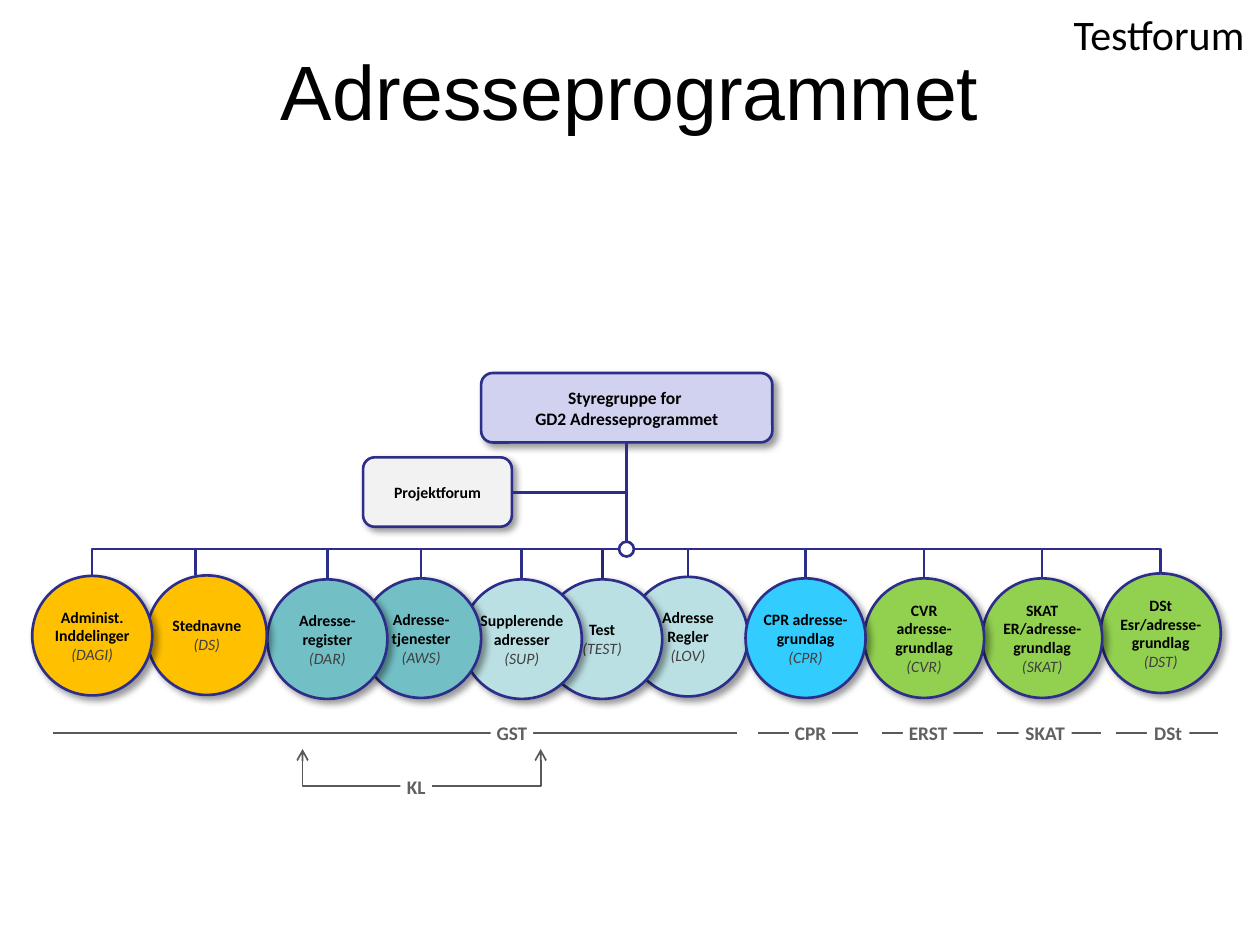
from lxml.etree import SubElement
from pptx import Presentation
from pptx.dml.color import RGBColor
from pptx.enum.shapes import MSO_CONNECTOR, MSO_SHAPE
from pptx.enum.text import MSO_ANCHOR, MSO_AUTO_SIZE, PP_ALIGN
from pptx.oxml.ns import qn
from pptx.util import Cm, Pt

NAVY, GREY, BLACK = "2D2D8A", "595959", "000000"
GOLD, TEAL, PALE, SKY, GREEN = "FFC000", "72BFC5", "BBE0E3", "33CCFF", "92D050"
color = RGBColor.from_string


def add_box(kind, place, fill, paragraphs, margins=(0, 0), outlined=True):
    box = slide.shapes.add_shape(kind, *map(Cm, place))
    if fill:
        box.fill.solid()
        box.fill.fore_color.rgb = color(fill)
    else:
        box.fill.background()
    if outlined:
        box.line.color.rgb = color(NAVY)
        box.line.width = Pt(1.5)
    else:
        box.line.fill.background()
    box.shadow.inherit = False
    if outlined and paragraphs:
        effects = box._element.spPr.find(qn("a:effectLst"))
        shadow = SubElement(effects, qn("a:outerShdw"), blurRad="50800", dist="38100",
                            dir="2700000", algn="tl", rotWithShape="0")
        tint = SubElement(shadow, qn("a:srgbClr"), val=BLACK)
        SubElement(tint, qn("a:alpha"), val="40000")
    frame = box.text_frame
    side, edge = margins
    settings = {"margin_left": Cm(side), "margin_right": Cm(side), "margin_top": Cm(edge),
                "margin_bottom": Cm(edge), "word_wrap": outlined,
                "vertical_anchor": MSO_ANCHOR.MIDDLE if outlined else MSO_ANCHOR.TOP}
    for name, value in settings.items():
        setattr(frame, name, value)
    for index, (words, size, ink, bold) in enumerate(paragraphs):
        paragraph = frame.add_paragraph() if index else frame.paragraphs[0]
        paragraph.text = words
        paragraph.alignment = PP_ALIGN.CENTER
        for run in paragraph.runs:
            font = {"name": "Calibri", "size": Pt(size), "bold": bold, "italic": not bold}
            for name, value in font.items():
                setattr(run.font, name, value)
            run.font.color.rgb = color(ink)
    return box


def add_line(kind, ends, ink=NAVY, width=1.5):
    line = slide.shapes.add_connector(kind, *map(Cm, ends))
    line.line.color.rgb = color(ink)
    line.line.width = Pt(width)
    properties = line._element.spPr
    SubElement(properties, qn("a:effectLst"))
    if kind == MSO_CONNECTOR.ELBOW:
        properties.find(qn("a:prstGeom")).set("prst", "bentConnector2")


deck = Presentation()
deck.slide_width, deck.slide_height = Cm(25.4), Cm(19.05)
slide = deck.slides.add_slide(deck.slide_layouts[5])

title = slide.shapes.title
title_place = {"left": Cm(1.27), "top": Cm(0.76), "width": Cm(22.86), "height": Cm(3.18)}
for name, value in title_place.items():
    setattr(title, name, value)
title.text_frame.text = "Adresseprogrammet"
title.text_frame.vertical_anchor = MSO_ANCHOR.TOP

forum = slide.shapes.add_textbox(Cm(21.36), Cm(0.05), Cm(4.01), Cm(1.27))
forum.text_frame.text = "Testforum"
forum.text_frame.word_wrap = False

for heading, face, size in ((title, "Arial", 44), (forum, "Calibri", 24)):
    paragraph = heading.text_frame.paragraphs[0]
    paragraph.alignment = PP_ALIGN.CENTER
    font = paragraph.runs[0].font
    font.name, font.size = face, Pt(size)
    font.color.rgb = color(BLACK)

CIRCLE_W, CIRCLE_H = 2.42, 2.41
projects = [
    (13.87, 11.63, PALE, ["Adresse", "Regler"], "(LOV)"),
    (12.14, 11.68, PALE, ["Test"], "(TEST)"),
    (23.4, 11.56, GREEN, ["DSt Esr/adresse-grundlag"], "(DST)"),
    (21.01, 11.66, GREEN, ["SKAT ER/adresse-grundlag"], "(SKAT)"),
    (18.63, 11.66, GREEN, ["CVR adresse-grundlag"], "(CVR)"),
    (16.24, 11.66, SKY, ["CPR adresse-grundlag"], "(CPR)"),
    (10.52, 11.68, PALE, ["Supplerende adresser"], "(SUP)"),
    (8.49, 11.66, TEAL, ["Adresse-tjenester"], "(AWS)"),
    (6.6, 11.68, TEAL, ["Adresse-register"], "(DAR)"),
    (4.17, 11.6, GOLD, ["Stednavne"], "(DS)"),
    (1.86, 11.61, GOLD, ["Administ. Inddelinger"], "(DAGI)"),
]
for center, top, fill, names, code in projects:
    texts = [(name, 9, BLACK, True) for name in names] + [(code, 9, "404040", False)]
    add_box(MSO_SHAPE.OVAL, (center - CIRCLE_W / 2, top, CIRCLE_W, CIRCLE_H), fill, texts)

add_box(MSO_SHAPE.ROUNDED_RECTANGLE, (9.7, 7.52, 5.87, 1.4), "D1D1F0",
        [("Styregruppe for \vGD2 Adresseprogrammet", 10, BLACK, True)])
add_box(MSO_SHAPE.ROUNDED_RECTANGLE, (7.32, 9.22, 3, 1.4), "F2F2F2",
        [("Projektforum", 9, BLACK, True)])

HUB_X, HUB_Y, HUB_R = 12.63, 11.07, 0.15
add_box(MSO_SHAPE.OVAL, (HUB_X - HUB_R, HUB_Y - HUB_R, 2 * HUB_R, 2 * HUB_R), None, [])
for center, top, fill, names, code in projects:
    if code == "(TEST)":
        add_line(MSO_CONNECTOR.STRAIGHT, (center, HUB_Y, center, top), "262673")
        continue
    drop = 3.94 if code == "(DS)" else center
    start = HUB_X + (HUB_R if drop > HUB_X else -HUB_R)
    add_line(MSO_CONNECTOR.ELBOW, (start, HUB_Y, drop, top))
for target in (HUB_Y - HUB_R, 8.92):
    add_line(MSO_CONNECTOR.ELBOW, (10.32, 9.93, HUB_X, target))

owners = [
    ("GST", 10.32, 0.86, 1.07, 14.86),
    ("CPR", 16.34, 0.86, 15.29, 17.3),
    ("ERST", 18.71, 1.02, 17.78, 19.81),
    ("SKAT", 21.07, 1.07, 20.09, 22.2),
    ("DSt", 23.55, 0.86, 22.5, 24.56),
]
for owner, center, width, start, end in owners:
    add_line(MSO_CONNECTOR.STRAIGHT, (start, 14.78, end, 14.78), GREY, 1)

bracket_path = slide.shapes.build_freeform(Cm(6.1), Cm(15.1))
bracket_path.add_line_segments(
    [(Cm(6.1), Cm(15.84)), (Cm(10.9), Cm(15.84)), (Cm(10.9), Cm(15.1))], close=False)
bracket = bracket_path.convert_to_shape()
bracket.fill.background()
bracket.line.color.rgb = color(GREY)
bracket.line.width = Pt(1)
bracket.shadow.inherit = False
for tip in ("a:headEnd", "a:tailEnd"):
    SubElement(bracket.line._get_or_add_ln(), qn(tip), type="arrow")

labels = [(owner, center, 14.41, width) for owner, center, width, start, end in owners]
for words, center, top, width in labels + [("KL", 8.39, 15.49, 0.64)]:
    label = add_box(MSO_SHAPE.RECTANGLE, (center - width / 2, top, width, 0.74), "FFFFFF",
                    [(words, 11, "606060", True)], margins=(0.1, 0.13), outlined=False)
    label.text_frame.auto_size = MSO_AUTO_SIZE.SHAPE_TO_FIT_TEXT

deck.save("out.pptx")
